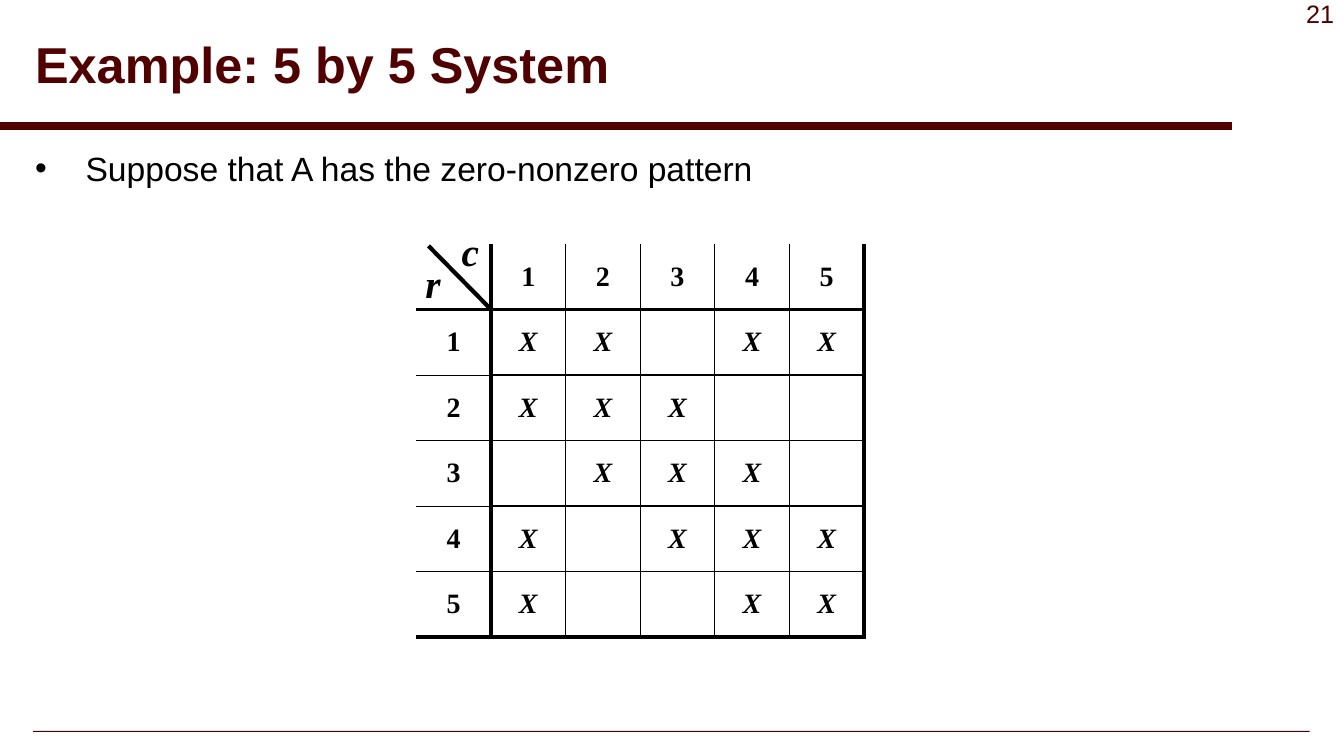
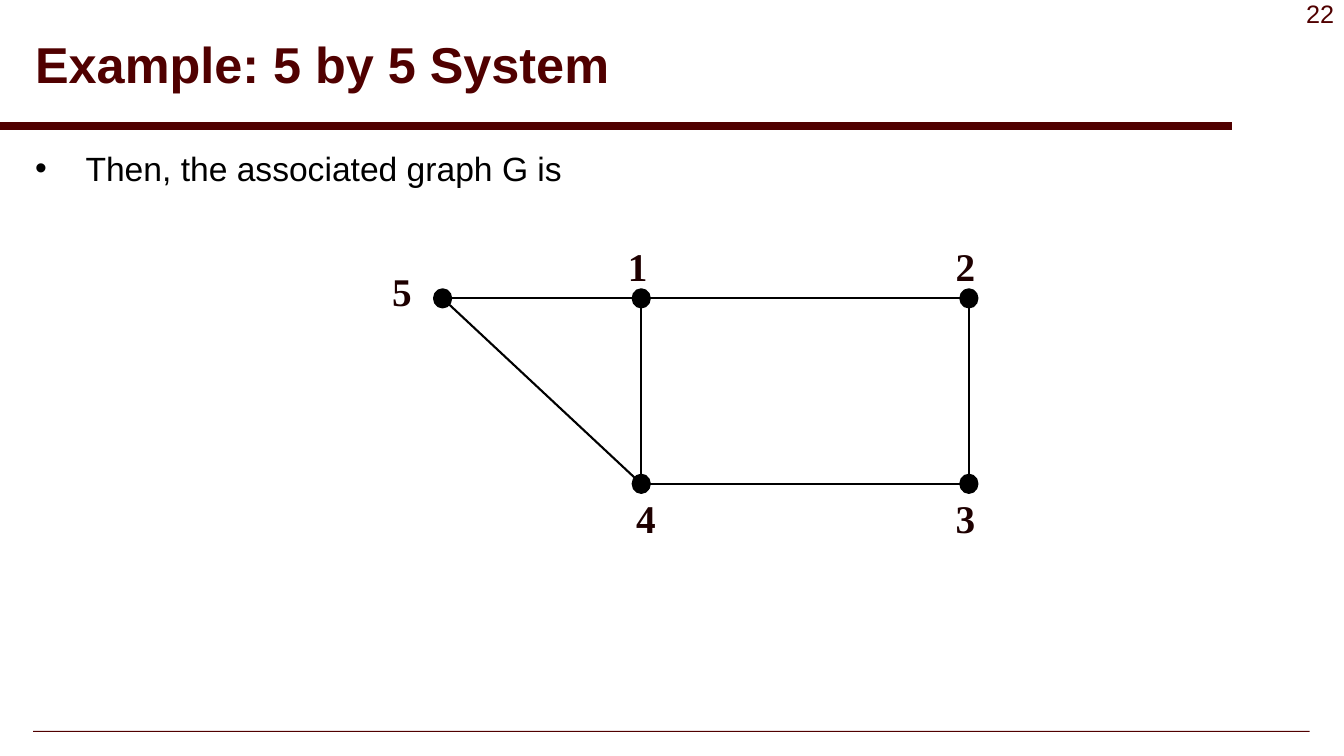
import pptx
import pptx.util
import pptx.dml.color
import pptx.enum.shapes
import pptx.enum.text
import pptx.oxml
import pptx.oxml.ns
from lxml import etree

Inches = pptx.util.Inches
Pt = pptx.util.Pt
RGB = pptx.dml.color.RGBColor
Align = pptx.enum.text.PP_ALIGN
Anchor = pptx.enum.text.MSO_ANCHOR
Shape = pptx.enum.shapes.MSO_SHAPE
qn = pptx.oxml.ns.qn

MAROON = RGB(0x50, 0x00, 0x00)
DARK = RGB(0x1E, 0x00, 0x00)
BLACK = RGB(0x00, 0x00, 0x00)
SANS, SERIF = "Arial", "Times New Roman"

TITLE = "Example: 5 by 5 System"
PATTERN = ["XX XX", "XXX  ", " XXX ", "X XXX", "X  XX"]
GRID_LEFT, GRID_TOP, COL, ROW = 4.13, 2.42, 0.74, 0.65
AXES = [("r", 4.12, 2.52), ("c", 4.48, 2.21)]

# node: centre, then top left of its label
NODES = {
    "1": ((6.36, 2.96), (6.13, 2.35)),
    "2": ((9.61, 2.96), (9.38, 2.35)),
    "3": ((9.61, 4.8), (9.38, 4.85)),
    "4": ((6.36, 4.8), (6.21, 4.85)),
    "5": ((4.39, 2.96), (3.79, 2.6)),
}
EDGES = ["51", "12", "23", "34", "41", "54"]
DOT_W, DOT_H = 0.17, 0.18


def style(para, size, color, face=SANS, bold=False, italic=False):
    for run in para.runs:
        font = run.font
        font.name, font.size = face, Pt(size)
        font.bold, font.italic = bold, italic
        font.color.rgb = color


def add_text(slide, text, box, size, color, wrap=True, **look):
    """Add a one-paragraph text box and return its paragraph and frame."""
    frame = slide.shapes.add_textbox(*map(Inches, box)).text_frame
    frame.word_wrap = wrap
    frame.text = text
    para = frame.paragraphs[0]
    style(para, size, color, **look)
    return para, frame


def add_line(slide, start, end, color, width):
    line = slide.shapes.add_connector(
        pptx.enum.shapes.MSO_CONNECTOR.STRAIGHT, *map(Inches, start + end))
    line.line.color.rgb = color
    line.line.width = Pt(width)
    etree.SubElement(line._element.spPr, qn("a:effectLst"))


def add_solid(slide, kind, box, color):
    shape = slide.shapes.add_shape(kind, *map(Inches, box))
    shape.shadow.inherit = False
    shape.fill.solid()
    shape.fill.fore_color.rgb = color
    shape.line.fill.background()
    return shape


def add_bullet(para):
    props = para._p.get_or_add_pPr()
    props.set("marL", str(Inches(0.5)))
    props.set("indent", str(-Inches(0.5)))
    color = etree.SubElement(props, qn("a:buClr"))
    etree.SubElement(color, qn("a:srgbClr"), val=str(BLACK))
    etree.SubElement(props, qn("a:buFont"), typeface=SANS)
    etree.SubElement(props, qn("a:buChar"), char="•")


def add_page(deck, number, point):
    slide = deck.slides.add_slide(deck.slide_layouts[6])
    add_solid(slide, Shape.RECTANGLE, (0.33, 7.25, 12.66, 0.01), MAROON)
    add_line(slide, (0, 1.25), (12.22, 1.25), MAROON, 6)
    para, _ = add_text(slide, str(number), (12.13, -0.07, 1.2, 0.4), 18, MAROON)
    para.alignment = Align.RIGHT
    para, frame = add_text(slide, TITLE, (0.25, 0.08, 11.92, 1.17), 36, MAROON,
                           bold=True)
    para.line_spacing = 0.9
    frame.vertical_anchor = Anchor.MIDDLE
    para, _ = add_text(slide, point, (0.25, 1.42, 11.92, 5.67), 24, BLACK)
    add_bullet(para)
    return slide


def rule_width(index, last, header):
    """Width of a grid line: none outside, heavy by the header and at the end."""
    if index == 0:
        return 0
    if index in (1, last):
        return 3
    return 0.75 if header else 1


def set_borders(cell, widths):
    props = cell._tc.get_or_add_tcPr()
    for place, (side, width) in enumerate(zip("LRTB", widths)):
        line = etree.Element(qn("a:ln" + side), w=str(Pt(width)))
        if width:
            fill = etree.SubElement(line, qn("a:solidFill"))
            etree.SubElement(fill, qn("a:srgbClr"), val=str(BLACK))
        else:
            etree.SubElement(line, qn("a:noFill"))
        props.insert(place, line)


def add_grid(slide):
    heads = [str(n + 1) for n in range(len(PATTERN))]
    rows = [[""] + heads]
    rows += [[head, *marks] for head, marks in zip(heads, PATTERN)]
    size = len(rows)
    table = slide.shapes.add_table(
        size, size, Inches(GRID_LEFT), Inches(GRID_TOP),
        Inches(COL * size), Inches(ROW * size)).table
    table.first_row = table.horz_banding = False
    for i, row in enumerate(rows):
        table.rows[i].height = Inches(ROW)
        table.columns[i].width = Inches(COL)
        for j, text in enumerate(row):
            cell = table.cell(i, j)
            cell.text = text.strip()
            cell.vertical_anchor = Anchor.MIDDLE
            cell.fill.background()
            para = cell.text_frame.paragraphs[0]
            para.alignment = Align.CENTER
            style(para, 20, BLACK, SERIF, bold=True, italic=text == "X")
            set_borders(cell, [rule_width(j, size, i == 0),
                               rule_width(j + 1, size, i == 0),
                               rule_width(i, size, j == 0),
                               rule_width(i + 1, size, j == 0)])
    for name, left, top in AXES:
        add_text(slide, name, (left, top, 0.21, 0.57), 28, BLACK, wrap=False,
                 face=SERIF, bold=True, italic=True)
    add_line(slide, (4.88, 3.08), (4.25, 2.44), BLACK, 3)


def add_graph(slide):
    for name, ((x, y), spot) in NODES.items():
        add_text(slide, name, spot + (0.49, 0.53), 28, DARK,
                 face=SERIF, bold=True)
        dot = add_solid(slide, Shape.OVAL,
                        (x - DOT_W / 2, y - DOT_H / 2, DOT_W, DOT_H), BLACK)
        dot.line.color.rgb = BLACK
        dot.line.width = Pt(1.5)
    for start, end in EDGES:
        add_line(slide, NODES[start][0], NODES[end][0], BLACK, 1.5)


def main():
    deck = pptx.Presentation()
    deck.slide_width, deck.slide_height = Inches(13.33), Inches(7.5)
    add_grid(add_page(deck, 21, "Suppose that A has the zero-nonzero pattern"))
    add_graph(add_page(deck, 22, "Then, the associated graph G is"))
    deck.save("out.pptx")


if __name__ == "__main__":
    main()
